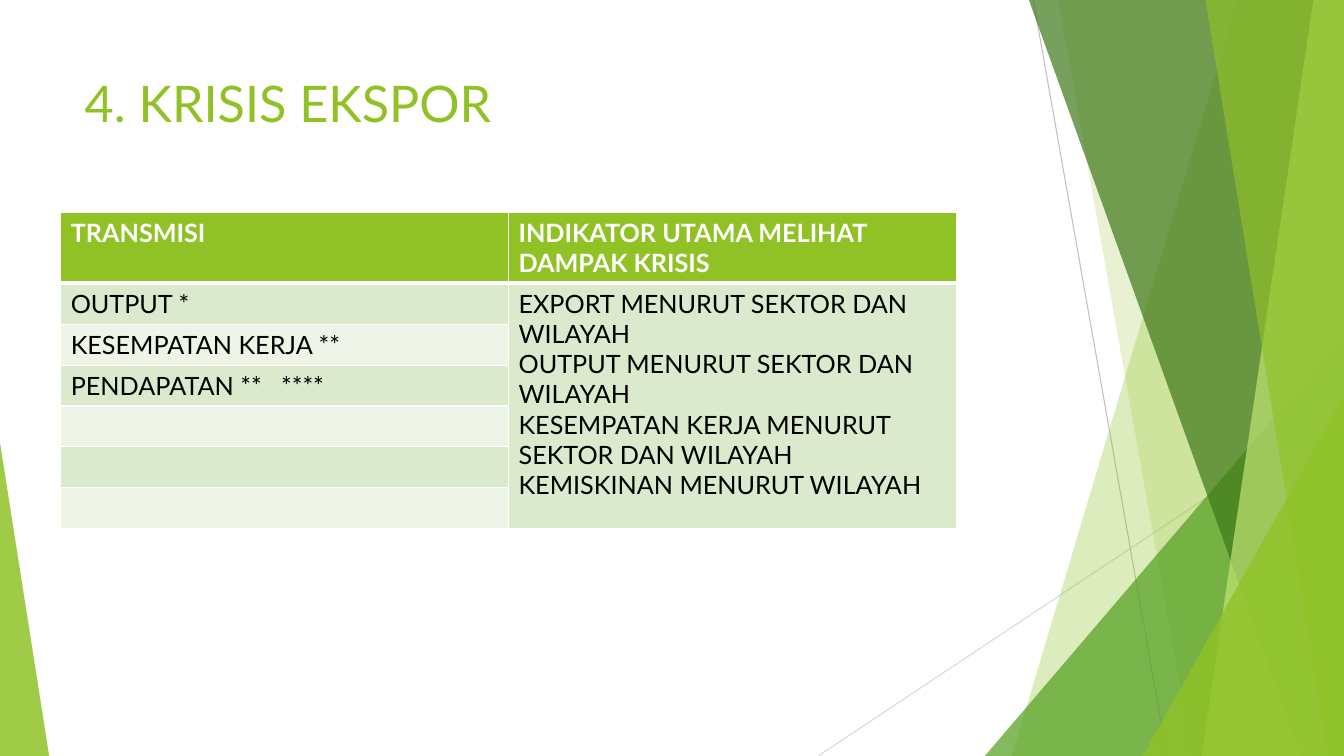
from lxml.etree import SubElement as Sub
from pptx import Presentation
from pptx.dml.color import RGBColor
from pptx.enum.shapes import MSO_CONNECTOR as Link, MSO_SHAPE as Kind
from pptx.enum.text import MSO_ANCHOR as Anchor, PP_ALIGN as Align
from pptx.oxml import parse_xml
from pptx.oxml.ns import nsdecls, qn
from pptx.util import Cm, Pt

WIDE, HIGH = 33.87, 19.05
LIME, LEAF, PINE, PALE = "90C226", "54A021", "3F7819", "C0E474"
WHITE, BLACK = "FFFFFF", "000000"
BANDS = ["DBE9CD", "EEF4E8"]


def color(code):
    return RGBColor.from_string(code)


class Deck:
    font = "Lato"

    def __init__(self):
        self.file = Presentation()
        self.file.slide_width = Cm(WIDE)
        self.file.slide_height = Cm(HIGH)
        self.slide = self.file.slides.add_slide(self.file.slide_layouts[5])
        self.shapes = self.slide.shapes

    def style(self, frame, size, code, bold=False):
        for para in frame.paragraphs:
            para.alignment = Align.LEFT
            for run in para.runs:
                font = run.font
                font.name, font.size, font.bold = self.font, Pt(size), bold
                font.color.rgb = color(code)

    def paint(self, shape, code, alpha):
        shape.shadow.inherit = False
        shape.fill.solid()
        shape.fill.fore_color.rgb = color(code)
        shape.line.fill.background()
        tint = shape._element.spPr.find(qn("a:solidFill"))[0]
        Sub(tint, qn("a:alpha"), val=str(alpha * 1000))

    def line(self, x1, y1, x2, y2, code):
        line = self.shapes.add_connector(
            Link.STRAIGHT, Cm(x1), Cm(y1), Cm(x2), Cm(y2))
        line.line.color.rgb = color(code)
        line.line.width = Pt(0.75)
        Sub(line._element.spPr, qn("a:effectLst"))

    def panel(self, top, foot, code, alpha):
        pen = self.shapes.build_freeform(Cm(top), 0)
        pen.add_line_segments([
            (Cm(WIDE), 0), (Cm(WIDE), Cm(HIGH)), (Cm(foot), Cm(HIGH))])
        self.paint(pen.convert_to_shape(), code, alpha)

    def wedge(self, left, top, width, peak, code, alpha):
        shape = self.shapes.add_shape(
            Kind.ISOSCELES_TRIANGLE, Cm(left), Cm(top), Cm(width), Cm(HIGH - top))
        shape.adjustments[0] = peak
        self.paint(shape, code, alpha)

    def title(self, text, left, top, width, height):
        title = self.shapes.title
        title.left, title.top = Cm(left), Cm(top)
        title.width, title.height = Cm(width), Cm(height)
        frame = title.text_frame
        frame.text = text
        frame.word_wrap = True
        frame.vertical_anchor = Anchor.TOP
        self.style(frame, 36, LIME)
        self.shapes._spTree.append(title._element)

    def edge(self, cell, row):
        widths = {"L": 1, "R": 1, "T": 3 if row == 1 else 1,
                  "B": 3 if row == 0 else 1}
        for spot, (side, width) in enumerate(widths.items()):
            cell._tc.get_or_add_tcPr().insert(spot, parse_xml(
                f'<a:ln{side} {nsdecls("a")} w="{Pt(width)}"><a:solidFill>'
                f'<a:srgbClr val="{WHITE}"/></a:solidFill></a:ln{side}>'))

    def table(self, rows, left, top, width, heights):
        grid = self.shapes.add_table(
            len(rows), 2, Cm(left), Cm(top), Cm(width), Cm(sum(heights))).table
        for row, (texts, height) in enumerate(zip(rows, heights)):
            grid.rows[row].height = Cm(height)
            for col, text in enumerate(texts):
                cell = grid.cell(row, col)
                cell.text_frame.text = text
                self.style(cell.text_frame, 18, BLACK if row else WHITE, not row)
                band = BANDS[0] if col else BANDS[(row - 1) % 2]
                cell.fill.solid()
                cell.fill.fore_color.rgb = color(band if row else LIME)
                self.edge(cell, row)
        grid.cell(1, 1).merge(grid.cell(len(rows) - 1, 1))


def main():
    deck = Deck()
    deck.line(26.04, 0, 29.41, HIGH, "BFBFBF")
    deck.line(WIDE, 10.24, 20.62, HIGH, "D9D9D9")
    deck.panel(31.19, 25.5, LIME, 30)
    deck.panel(26.67, 30.05, LIME, 20)
    deck.wedge(24.82, 8.46, 9.05, 1, LEAF, 72)
    deck.panel(25.93, 32.79, PINE, 70)
    deck.panel(33.1, 30.28, PALE, 70)
    deck.panel(30.38, 33.48, LIME, 65)
    deck.wedge(28.8, 9.98, 5.07, 1, LIME, 80)
    deck.wedge(0, 11.15, 1.24, 0, LIME, 85)
    deck.title("4. KRISIS EKSPOR", 1.88, 1.7, 23.88, 3.66)

    signs = "\n".join([
        "EXPORT MENURUT SEKTOR DAN WILAYAH",
        "OUTPUT MENURUT SEKTOR DAN WILAYAH",
        "KESEMPATAN KERJA MENURUT SEKTOR DAN WILAYAH",
        "KEMISKINAN MENURUT WILAYAH"])
    rows = [
        ("TRANSMISI", "INDIKATOR UTAMA MELIHAT DAMPAK KRISIS"),
        ("OUTPUT *", signs),
        ("KESEMPATAN KERJA **", ""),
        ("PENDAPATAN **   ****", "")] + [("", "")] * 3
    deck.table(rows, 1.53, 5.36, 22.57, [1.78] + [1.03] * 6)
    deck.file.save("out.pptx")


if __name__ == "__main__":
    main()
